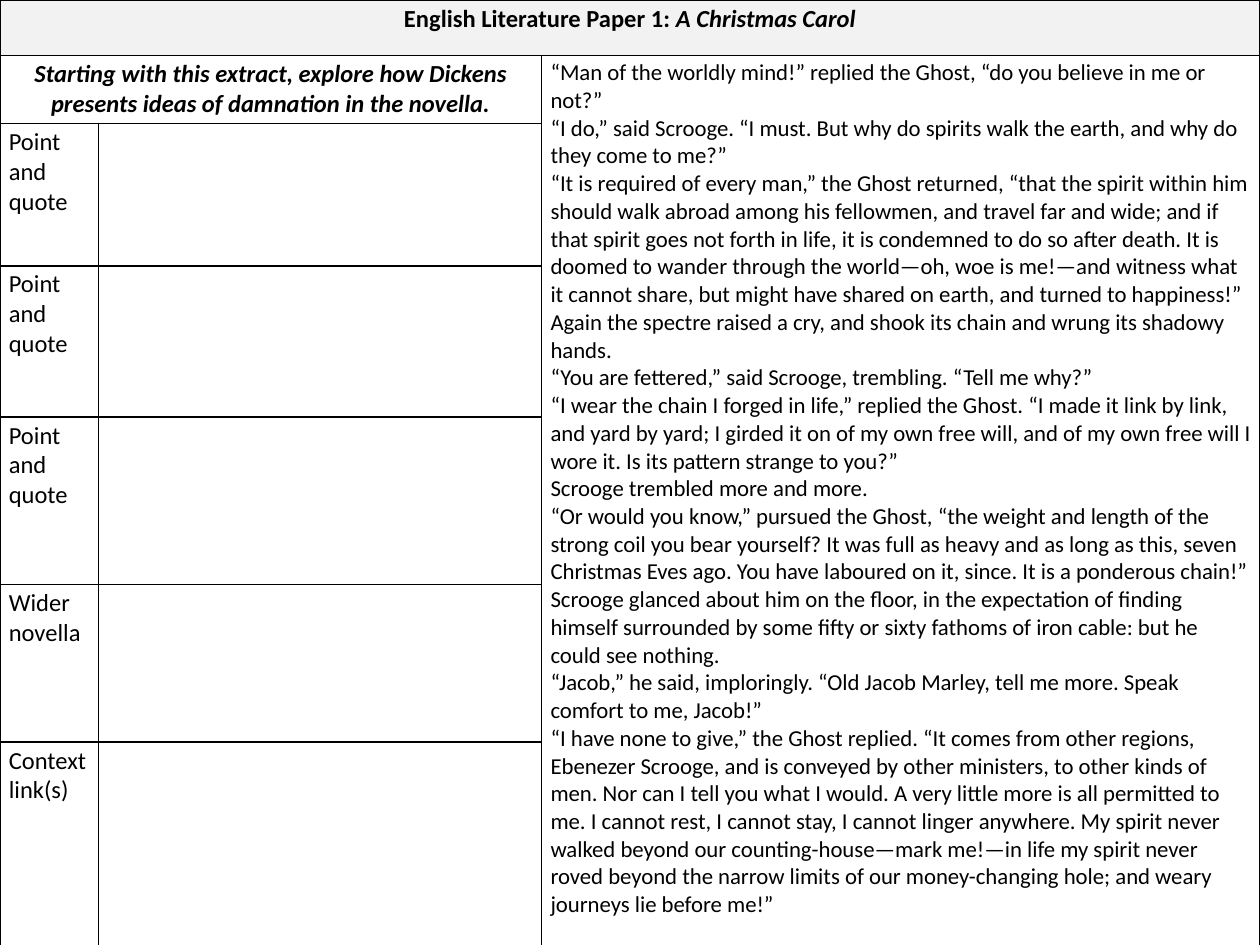
from dataclasses import dataclass

from lxml import etree
from pptx import Presentation
from pptx.dml.color import RGBColor
from pptx.enum.text import PP_ALIGN as Align
from pptx.oxml.ns import qn
from pptx.util import Inches, Pt


@dataclass(frozen=True)
class Theme:
    font: str = "Calibri"
    ink: str = "000000"
    header_fill: str = "F2F2F2"
    body_size: int = 14
    extract_size: int = 13
    border_width: int = 1


THEME = Theme()

COLUMN_WIDTHS = [0.78, 3.52, 5.7]
ROW_HEIGHTS = [0.44, 0.54, 1.13, 1.2, 1.33, 1.25, 1.66]

QUESTION = (
    "Starting with this extract, explore how Dickens presents ideas of "
    "damnation in the novella."
)
PROMPTS = ["Point and quote"] * 3 + ["Wider novella", "Context link(s)"]
EXTRACT = [
    "“Man of the worldly mind!” replied the Ghost, “do you believe in me or not?”",
    "“I do,” said Scrooge. “I must. But why do spirits walk the earth, and why do "
    "they come to me?”",
    "“It is required of every man,” the Ghost returned, “that the spirit within him "
    "should walk abroad among his fellowmen, and travel far and wide; and if that "
    "spirit goes not forth in life, it is condemned to do so after death. It is "
    "doomed to wander through the world—oh, woe is me!—and witness what it cannot "
    "share, but might have shared on earth, and turned to happiness!”",
    "Again the spectre raised a cry, and shook its chain and wrung its shadowy hands.",
    "“You are fettered,” said Scrooge, trembling. “Tell me why?”",
    "“I wear the chain I forged in life,” replied the Ghost. “I made it link by link, "
    "and yard by yard; I girded it on of my own free will, and of my own free will I "
    "wore it. Is its pattern strange to you?”",
    "Scrooge trembled more and more.",
    "“Or would you know,” pursued the Ghost, “the weight and length of the strong "
    "coil you bear yourself? It was full as heavy and as long as this, seven "
    "Christmas Eves ago. You have laboured on it, since. It is a ponderous chain!”",
    "Scrooge glanced about him on the floor, in the expectation of finding himself "
    "surrounded by some fifty or sixty fathoms of iron cable: but he could see nothing.",
    "“Jacob,” he said, imploringly. “Old Jacob Marley, tell me more. Speak comfort "
    "to me, Jacob!”",
    "“I have none to give,” the Ghost replied. “It comes from other regions, Ebenezer "
    "Scrooge, and is conveyed by other ministers, to other kinds of men. Nor can I "
    "tell you what I would. A very little more is all permitted to me. I cannot rest, "
    "I cannot stay, I cannot linger anywhere. My spirit never walked beyond our "
    "counting-house—mark me!—in life my spirit never roved beyond the narrow limits "
    "of our money-changing hole; and weary journeys lie before me!”",
]


def add_span(para, text, size=THEME.body_size, bold=False, italic=False):
    span = para.add_run()
    span.text = text
    font = span.font
    font.name, font.size = THEME.font, Pt(size)
    font.bold, font.italic = bold, italic
    font.color.rgb = RGBColor.from_string(THEME.ink)


def add_borders(cell):
    props = cell._tc.get_or_add_tcPr()
    for side in ("a:lnL", "a:lnR", "a:lnT", "a:lnB"):
        line = etree.SubElement(props, qn(side), w=str(Pt(THEME.border_width)))
        fill = etree.SubElement(line, qn("a:solidFill"))
        etree.SubElement(fill, qn("a:srgbClr"), val=THEME.ink)


def style_cell(cell):
    cell.margin_left = cell.margin_right = Inches(0.07)
    cell.margin_top = cell.margin_bottom = Inches(0.03)
    add_borders(cell)
    cell.fill.background()


def add_grid(page, left, top, width, height):
    """Add the plain ruled table with its merged areas."""
    table = page.shapes.add_table(
        len(ROW_HEIGHTS), len(COLUMN_WIDTHS), left, top, width, height
    ).table
    table.first_row = table.horz_banding = False
    for column, size in zip(table.columns, COLUMN_WIDTHS):
        column.width = Inches(size)
    for row, size in zip(table.rows, ROW_HEIGHTS):
        row.height = Inches(size)
    for cell in table.iter_cells():
        style_cell(cell)
    table.cell(0, 0).merge(table.cell(0, 2))
    table.cell(1, 0).merge(table.cell(1, 1))
    table.cell(1, 2).merge(table.cell(6, 2))
    return table


def fill_header(cell):
    cell.fill.solid()
    cell.fill.fore_color.rgb = RGBColor.from_string(THEME.header_fill)
    para = cell.text_frame.paragraphs[0]
    para.alignment = Align.CENTER
    add_span(para, "English Literature Paper 1: ", bold=True)
    add_span(para, "A Christmas Carol", bold=True, italic=True)


def fill_question(cell):
    para = cell.text_frame.paragraphs[0]
    para.alignment = Align.CENTER
    add_span(para, QUESTION, bold=True, italic=True)


def fill_extract(cell):
    frame = cell.text_frame
    for index, text in enumerate(EXTRACT):
        para = frame.add_paragraph() if index else frame.paragraphs[0]
        add_span(para, text, THEME.extract_size)


def fill_prompts(table, first_row):
    for row, prompt in enumerate(PROMPTS, first_row):
        add_span(table.cell(row, 0).text_frame.paragraphs[0], prompt)


def build_worksheet(page, left, top, width, height):
    table = add_grid(page, left, top, width, height)
    fill_header(table.cell(0, 0))
    fill_question(table.cell(1, 0))
    fill_extract(table.cell(1, 2))
    fill_prompts(table, first_row=2)


def main():
    deck = Presentation()
    deck.slide_width, deck.slide_height = Inches(10), Inches(7.5)
    page = deck.slides.add_slide(deck.slide_layouts[6])
    build_worksheet(
        page, Inches(0), Inches(0),
        Inches(sum(COLUMN_WIDTHS)), Inches(sum(ROW_HEIGHTS)),
    )
    deck.save("out.pptx")


if __name__ == "__main__":
    main()
